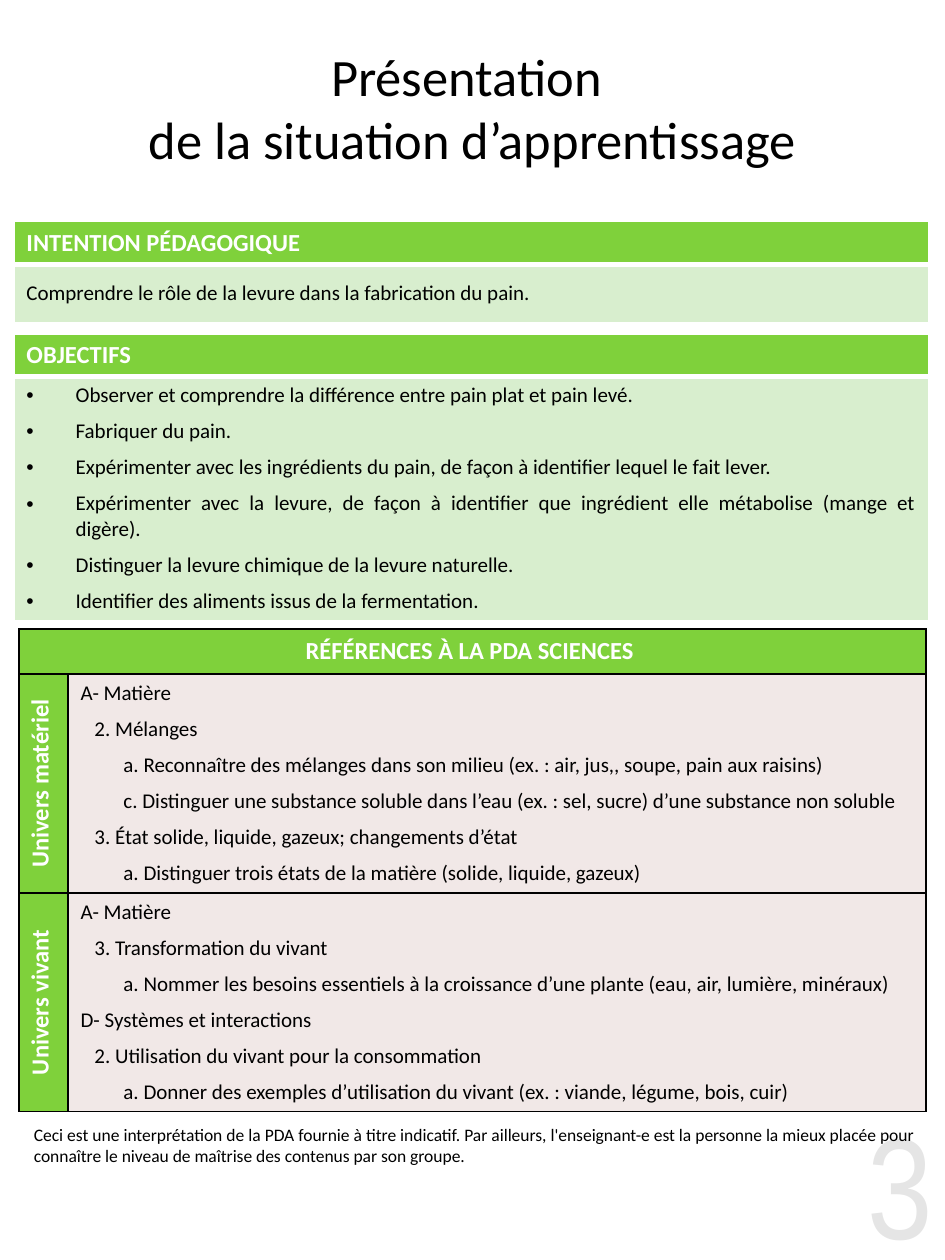
from dataclasses import dataclass
from typing import Optional

import pptx
import pptx.dml.color
import pptx.enum.text
import pptx.oxml.ns
import pptx.util
from lxml import etree

RGBColor = pptx.dml.color.RGBColor
Alignment = pptx.enum.text.PP_ALIGN
Anchor = pptx.enum.text.MSO_ANCHOR
qn = pptx.oxml.ns.qn

BLACK = RGBColor(0x00, 0x00, 0x00)
WHITE = RGBColor(0xFF, 0xFF, 0xFF)
GREEN = RGBColor(0x7F, 0xD1, 0x3B)
PALE_GREEN = RGBColor(0xD8, 0xEE, 0xCE)
PALE_PINK = RGBColor(0xF1, 0xE8, 0xE7)

SLIDE_WIDTH = pptx.util.Inches(7.5)
SLIDE_HEIGHT = pptx.util.Inches(10)
LEVEL_INDENTS = (0, 0.11, 0.34)  # inches for each outline level
HANGING_INDENT = 0.39
THIN, THICK = 1, 3


@dataclass(frozen=True)
class Style:
    size: float
    color: RGBColor
    bold: bool = False
    font: str = "Calibri"
    alignment: Alignment = Alignment.LEFT


@dataclass(frozen=True)
class Line:
    text: str
    level: int = 0


@dataclass(frozen=True)
class Box:
    """Place on the slide, in percent of its width and height."""
    left: float
    top: float
    width: float
    height: float

    def lengths(self) -> tuple[int, int, int, int]:
        return (across(self.left), down(self.top), across(self.width), down(self.height))


@dataclass(frozen=True)
class Section:
    heading: str
    lines: tuple[str, ...]
    box: Box
    bullet: Optional[str] = None


@dataclass(frozen=True)
class Universe:
    name: str
    lines: tuple[Line, ...]


HEADING = Style(14, WHITE, bold=True)
CENTRED_HEADING = Style(14, WHITE, bold=True, alignment=Alignment.CENTER)
BODY = Style(12, BLACK)
JUSTIFIED_BODY = Style(12, BLACK, alignment=Alignment.JUSTIFY)
NOTE = Style(10, BLACK, alignment=Alignment.JUSTIFY)
TITLE = Style(30, BLACK, alignment=Alignment.CENTER)
PAGE_NUMBER = Style(82, BLACK, font="Arial Narrow", alignment=Alignment.RIGHT)

TITLE_LINES = ("Présentation ", "de la situation d’apprentissage")
TITLE_BOX = Box(0, 2.6, 100, 11.8)
REFERENCES_BOX = Box(2, 49.9, 96, 38.3)
NOTE_BOX = Box(2.27, 88.7, 95.73, 4.4)
NUMBER_BOX = Box(83.73, 87.6, 16.27, 12.4)
SECTION_HEADING_HEIGHT = 3.35
REFERENCES_HEADING_HEIGHT = 3.6
UNIVERSE_COLUMN_WIDTH = 5.2

SECTIONS = (
    Section("INTENTION PÉDAGOGIQUE",
            ("Comprendre le rôle de la levure dans la fabrication du pain.",),
            Box(1.47, 17.6, 96.8, 8)),
    Section("OBJECTIFS", (
        "Observer et comprendre la différence entre pain plat et pain levé.",
        "Fabriquer du pain.",
        "Expérimenter avec les ingrédients du pain, de façon à identifier lequel le fait lever.",
        "Expérimenter avec la levure, de façon à identifier que ingrédient elle métabolise (mange et digère).",
        "Distinguer la levure chimique de la levure naturelle.",
        "Identifier des aliments issus de la fermentation.",
    ), Box(1.47, 26.5, 96.8, 22.7), bullet="•"),
)

UNIVERSES = (
    Universe("Univers matériel", (
        Line("A- Matière"),
        Line("2. Mélanges", 1),
        Line("a. Reconnaître des mélanges dans son milieu (ex. : air, jus,, soupe, pain aux raisins)", 2),
        Line("c. Distinguer une substance soluble dans l’eau (ex. : sel, sucre) d’une substance non soluble", 2),
        Line("3. État solide, liquide, gazeux; changements d’état", 1),
        Line("a. Distinguer trois états de la matière (solide, liquide, gazeux)", 2),
    )),
    Universe("Univers vivant", (
        Line("A- Matière"),
        Line("3. Transformation du vivant", 1),
        Line("a. Nommer les besoins essentiels à la croissance d’une plante (eau, air, lumière, minéraux)", 2),
        Line("D- Systèmes et interactions"),
        Line("2. Utilisation du vivant pour la consommation", 1),
        Line("a. Donner des exemples d’utilisation du vivant (ex. : viande, légume, bois, cuir)", 2),
    )),
)


def across(percent: float) -> int:
    return round(SLIDE_WIDTH * percent / 100)


def down(percent: float) -> int:
    return round(SLIDE_HEIGHT * percent / 100)


def add_run(paragraph, text: str, style: Style):
    paragraph.alignment = style.alignment
    run = paragraph.add_run()
    run.text = text
    run.font.name = style.font
    run.font.size = pptx.util.Pt(style.size)
    run.font.bold = style.bold
    run.font.color.rgb = style.color
    return run


def write_lines(text_frame, lines, style: Style, hanging: float = 0, bullet: Optional[str] = None) -> None:
    for index, line in enumerate(lines):
        paragraph = text_frame.paragraphs[0] if index == 0 else text_frame.add_paragraph()
        properties = paragraph._p.get_or_add_pPr()
        left = hanging + LEVEL_INDENTS[line.level]
        properties.set("marL", str(pptx.util.Inches(left)))
        properties.set("indent", str(-pptx.util.Inches(hanging)))
        if bullet:
            etree.SubElement(properties, qn("a:buFont"), typeface="Arial")
            etree.SubElement(properties, qn("a:buChar"), char=bullet)
        if index:
            paragraph.space_before = pptx.util.Pt(6)
        add_run(paragraph, line.text, style)


def format_cell(cell, fill: RGBColor, border: RGBColor, bottom: float = THIN, anchor=Anchor.MIDDLE) -> None:
    properties = cell._tc.get_or_add_tcPr()
    for side, points in (("L", THIN), ("R", THIN), ("T", THIN), ("B", bottom)):
        edge = etree.SubElement(properties, qn(f"a:ln{side}"), w=str(pptx.util.Pt(points)))
        solid = etree.SubElement(edge, qn("a:solidFill"))
        etree.SubElement(solid, qn("a:srgbClr"), val=str(border))
    cell.fill.solid()
    cell.fill.fore_color.rgb = fill
    cell.vertical_anchor = anchor


def add_table(slide, rows: int, columns: int, box: Box, heading_height: float):
    table = slide.shapes.add_table(rows, columns, *box.lengths()).table
    table.first_row = False
    table.horz_banding = False
    for index, row in enumerate(table.rows):
        row.height = down(heading_height if index == 0 else (box.height - heading_height) / (rows - 1))
    return table


def add_section(slide, section: Section) -> None:
    table = add_table(slide, 2, 1, section.box, SECTION_HEADING_HEIGHT)
    heading, body = table.cell(0, 0), table.cell(1, 0)
    format_cell(heading, GREEN, WHITE, bottom=THICK)
    write_lines(heading.text_frame, [Line(section.heading)], HEADING)
    format_cell(body, PALE_GREEN, WHITE)
    write_lines(body.text_frame, map(Line, section.lines), JUSTIFIED_BODY, HANGING_INDENT, section.bullet)


def add_references(slide) -> None:
    table = add_table(slide, len(UNIVERSES) + 1, 2, REFERENCES_BOX, REFERENCES_HEADING_HEIGHT)
    table.columns[0].width = across(UNIVERSE_COLUMN_WIDTH)
    table.columns[1].width = across(REFERENCES_BOX.width - UNIVERSE_COLUMN_WIDTH)
    heading = table.cell(0, 0)
    heading.merge(table.cell(0, 1))
    for column in range(2):
        format_cell(table.cell(0, column), GREEN, BLACK)
    write_lines(heading.text_frame, [Line("RÉFÉRENCES À LA PDA SCIENCES ")], CENTRED_HEADING)
    for row, universe in enumerate(UNIVERSES, start=1):
        name, contents = table.cell(row, 0), table.cell(row, 1)
        format_cell(name, GREEN, BLACK)
        name._tc.get_or_add_tcPr().set("vert", "vert270")
        write_lines(name.text_frame, [Line(universe.name)], CENTRED_HEADING)
        format_cell(contents, PALE_PINK, BLACK, anchor=Anchor.TOP)
        write_lines(contents.text_frame, universe.lines, BODY)


def add_text(slide, text: str, box: Box, style: Style, anchor=Anchor.TOP):
    text_frame = slide.shapes.add_textbox(*box.lengths()).text_frame
    text_frame.word_wrap = True
    text_frame.vertical_anchor = anchor
    return add_run(text_frame.paragraphs[0], text, style)


def main() -> None:
    presentation = pptx.Presentation()
    presentation.slide_width, presentation.slide_height = SLIDE_WIDTH, SLIDE_HEIGHT
    slide = presentation.slides.add_slide(presentation.slide_layouts[5])

    # Title
    title = slide.shapes.title
    title.left, title.top, title.width, title.height = TITLE_BOX.lengths()
    title.text_frame.vertical_anchor = Anchor.MIDDLE
    paragraph = title.text_frame.paragraphs[0]
    add_run(paragraph, TITLE_LINES[0], TITLE)
    paragraph.add_line_break()
    add_run(paragraph, TITLE_LINES[1], TITLE)

    # Tables
    add_references(slide)
    for section in SECTIONS:
        add_section(slide, section)

    # Closing note and translucent page number
    add_text(slide, "Ceci est une interprétation de la PDA fournie à titre indicatif. Par ailleurs, l'enseignant-e est "
             "la personne la mieux placée pour connaître le niveau de maîtrise des contenus par son groupe.",
             NOTE_BOX, NOTE)
    number = add_text(slide, "3", NUMBER_BOX, PAGE_NUMBER, Anchor.MIDDLE)
    color = number._r.find(".//" + qn("a:srgbClr"))
    etree.SubElement(color, qn("a:alpha"), val="10000")

    presentation.save("out.pptx")


if __name__ == "__main__":
    main()
